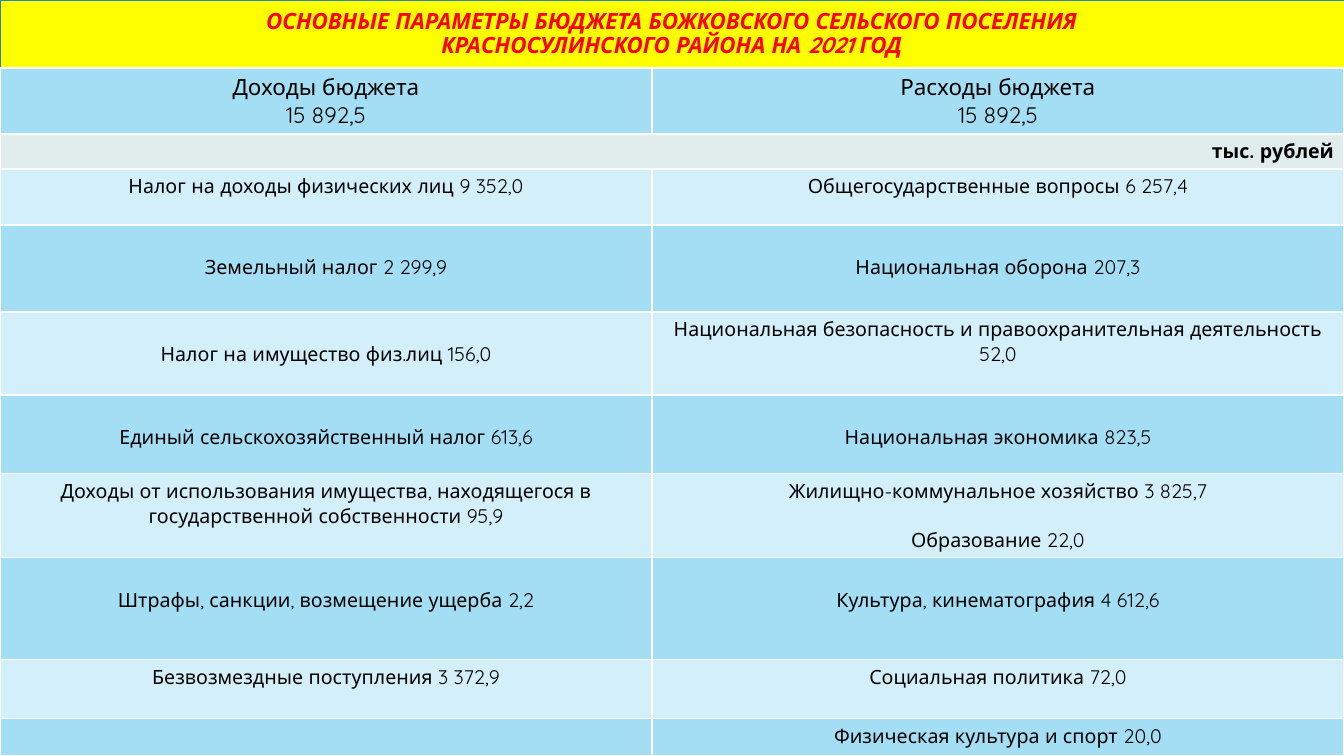
import pptx
import pptx.dml.color
import pptx.enum.shapes
import pptx.enum.text
import pptx.oxml
import pptx.oxml.ns
import pptx.util

RGB = pptx.dml.color.RGBColor
ALIGN = pptx.enum.text.PP_ALIGN
SCALE = 914400 / 100.8  # EMU per px

YELLOW = RGB(0xFF, 0xFF, 0x00)
RED = RGB(0xFF, 0x00, 0x00)
BLUE = RGB(0x26, 0x83, 0xC6)
BLACK = RGB(0x00, 0x00, 0x00)
SKY = RGB(0xA4, 0xDE, 0xF4)
PALE = RGB(0xD2, 0xEF, 0xFA)
GREY = RGB(0xE0, 0xED, 0xEC)
WHITE = RGB(0xFF, 0xFF, 0xFF)


def emu(px):
    return pptx.util.Emu(round(px * SCALE))


def write(frame, lines, align, color=BLACK, gap=0, **formats):
    formats = {"name": "Quicksand", "size": pptx.util.Pt(14), "bold": False} | formats
    for index, line in enumerate(lines):
        para = frame.paragraphs[0] if index == 0 else frame.add_paragraph()
        para.alignment = align
        if index:
            para.space_before = pptx.util.Pt(gap)
        span = para.add_run()
        span.text = line
        for key, value in formats.items():
            setattr(span.font, key, value)
        span.font.color.rgb = color


deck = pptx.Presentation()
deck.slide_width, deck.slide_height = emu(1344), emu(756)
page = deck.slides.add_slide(deck.slide_layouts[6])

# Title band
band = page.shapes.add_shape(
    pptx.enum.shapes.MSO_SHAPE.RECTANGLE, 0, 0, emu(1344), emu(68))
band.shadow.inherit = False
band.fill.solid()
band.fill.fore_color.rgb = YELLOW
band.line.color.rgb = BLUE
band.line.width = pptx.util.Pt(0.5)
band.text_frame.word_wrap = True
band.text_frame.vertical_anchor = pptx.enum.text.MSO_ANCHOR.MIDDLE
write(band.text_frame,
      ["ОСНОВНЫЕ ПАРАМЕТРЫ БЮДЖЕТА БОЖКОВСКОГО СЕЛЬСКОГО ПОСЕЛЕНИЯ",
       "КРАСНОСУЛИНСКОГО РАЙОНА НА 2021 ГОД"],
      ALIGN.CENTER, RED, size=pptx.util.Pt(16), bold=True, italic=True)
for para in band.text_frame.paragraphs:
    para.line_spacing = 0.9

# Budget rows: height, income lines, expense lines, top margins of both cells
TOP, LOW = 5, 30
budget = [
    (66, ["Доходы бюджета", "15 892,5"], ["Расходы бюджета", "15 892,5"], TOP, TOP),
    (35, ["тыс. рублей"], [], TOP, TOP),
    (56, ["Налог на доходы физических лиц 9 352,0"],
     ["Общегосударственные вопросы 6 257,4"], TOP, TOP),
    (87, ["Земельный налог 2 299,9"], ["Национальная оборона 207,3"], LOW, LOW),
    (83, ["Налог на имущество физ.лиц 156,0"],
     ["Национальная безопасность и правоохранительная деятельность 52,0"], LOW, TOP),
    (79, ["Единый сельскохозяйственный налог 613,6"],
     ["Национальная экономика 823,5"], LOW, LOW),
    (84, ["Доходы от использования имущества, находящегося в "
          "государственной собственности 95,9"],
     ["Жилищно-коммунальное хозяйство 3 825,7", "Образование 22,0"], TOP, TOP),
    (102, ["Штрафы, санкции, возмещение ущерба 2,2"],
     ["Культура, кинематография 4 612,6"], LOW, LOW),
    (59, ["Безвозмездные поступления 3 372,9"], ["Социальная политика 72,0"], TOP, TOP),
    (37, [], ["Физическая культура и спорт 20,0"], TOP, TOP),
]

# Table grid
heights = [row[0] for row in budget]
table = page.shapes.add_table(
    len(budget), 2, 0, emu(68), emu(1344), emu(sum(heights))).table
table.first_row = False
table.horz_banding = False
for column, width in zip(table.columns, (652, 692)):
    column.width = emu(width)
UNIT_ROW = 1
table.cell(UNIT_ROW, 0).merge(table.cell(UNIT_ROW, 1))

# Cells: borders, fill and text
for number, (height, income, expense, *margins) in enumerate(budget):
    table.rows[number].height = emu(height)
    for side, lines in enumerate((income, expense)):
        cell = table.cell(number, side)
        properties = cell._tc.get_or_add_tcPr()
        for edge in "LRTB":
            properties.append(pptx.oxml.parse_xml(
                f'<a:ln{edge} {pptx.oxml.ns.nsdecls("a")} w="12700"><a:solidFill>'
                f'<a:srgbClr val="{WHITE}"/></a:solidFill></a:ln{edge}>'))
        cell.fill.solid()
        cell.fill.fore_color.rgb = GREY if number == UNIT_ROW else PALE if number % 2 == 0 and number else SKY
        cell.margin_top = emu(margins[side])
        cell.text_frame.paragraphs[0].font.size = pptx.util.Pt(14)
        write(cell.text_frame, lines,
              ALIGN.RIGHT if number == UNIT_ROW else ALIGN.CENTER,
              gap=17.5 if number else 0,
              size=pptx.util.Pt(14 if number else 16),
              bold=number == UNIT_ROW)

deck.save("out.pptx")
